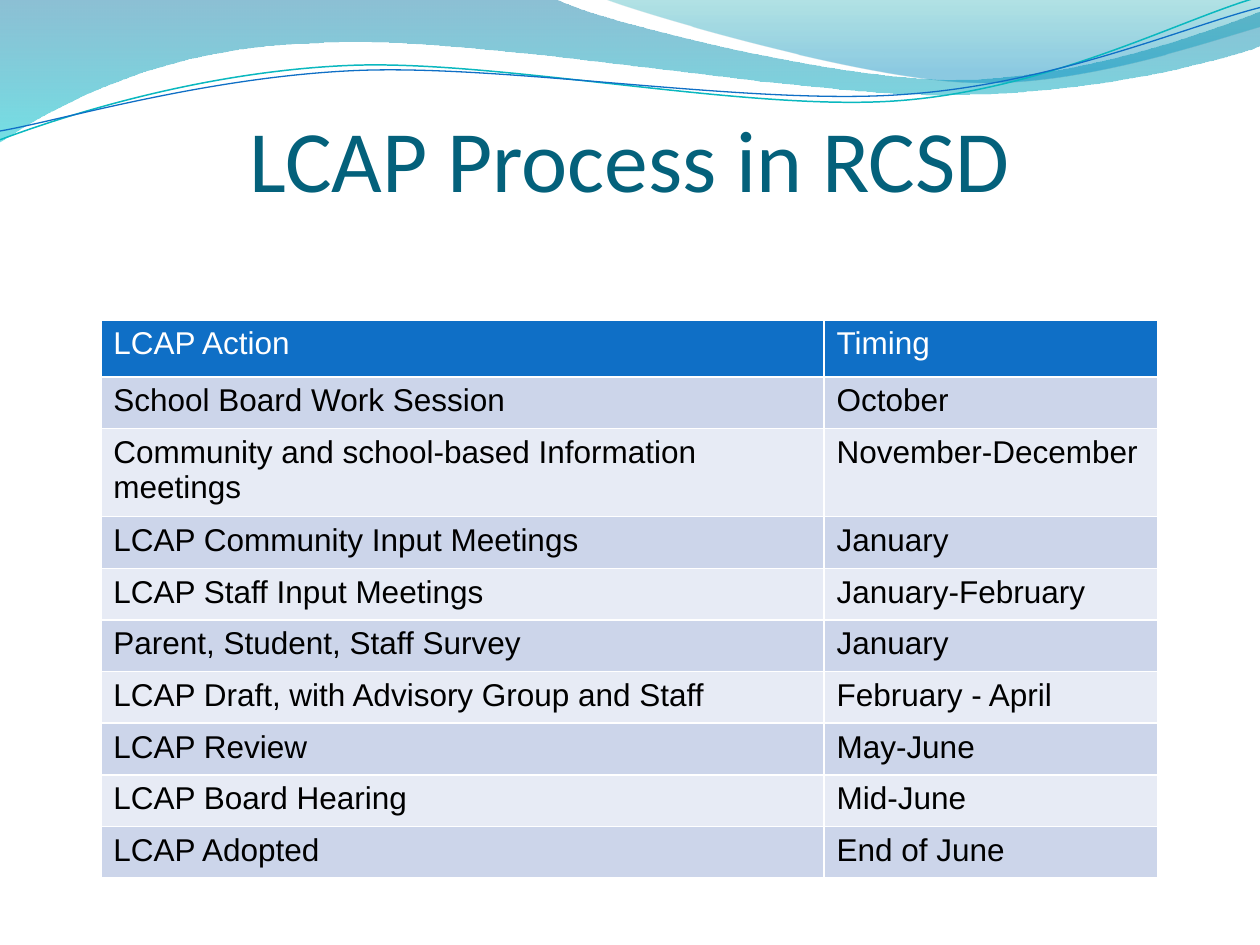
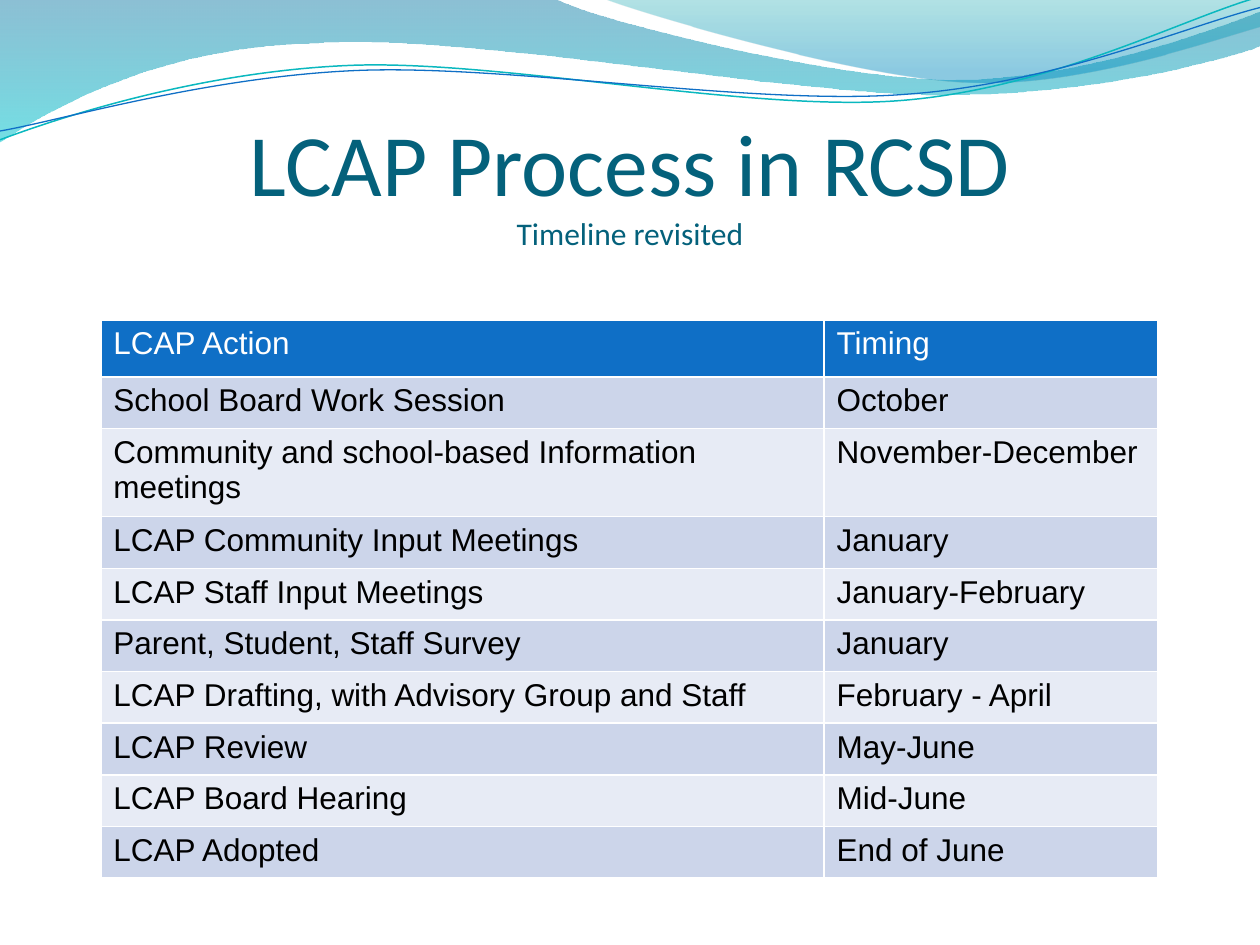
from dataclasses import dataclass

from lxml.etree import SubElement
from pptx import Presentation
from pptx.dml.color import RGBColor
from pptx.enum.text import MSO_ANCHOR, PP_ALIGN
from pptx.oxml.ns import qn
from pptx.shapes.autoshape import Shape
from pptx.slide import Slide
from pptx.util import Inches, Pt

WHITE, BLACK = "FFFFFF", "000000"
BLUE, TEAL, TITLE_INK = "0F6FC6", "0AB8BF", "04617B"
BANDS = ("CCD5EA", "E7EBF5")

Point = tuple[float, float]


@dataclass(frozen=True)
class GradientStop:
    position: float
    color: str
    opacity: int


@dataclass(frozen=True)
class Wave:
    start: Point
    segments: tuple[tuple[Point, ...], ...]
    stops: tuple[GradientStop, ...] = ()
    line_color: str = ""
    line_width: float = 0


@dataclass(frozen=True)
class Timeline:
    title_top: float
    subtitle: str
    draft_action: str


WAVES = (
    Wave(
        (0, 0),
        (
            ((4.4, -0.01),),
            ((4.76, 0.17), (6.64, 0.63), (7.58, 0.63)),
            ((8.53, 0.63), (9.58, 0.26), (10, 0.09)),
            ((10.01, 0.36),),
            ((9.83, 0.44), (8.7, 0.76), (7.46, 0.75)),
            ((6.22, 0.75), (3.82, 0.28), (2.57, 0.34)),
            ((1.29, 0.36), (0.46, 0.83), (-0.01, 1.13)),
            ((0, 0),),
        ),
        stops=(GradientStop(0, "0074A1", 45), GradientStop(1, "00C6CF", 55)),
    ),
    Wave(
        (4.79, -0.01),
        (
            ((5.09, 0.11), (6.82, 0.62), (7.69, 0.65)),
            ((8.56, 0.69), (9.61, 0.32), (10, 0.21)),
            ((10, 0),),
            ((4.79, -0.01),),
        ),
        stops=(GradientStop(0, "00A1A9", 30), GradientStop(0.8, "008BBF", 45)),
    ),
    Wave(
        (0, 1.11),
        (
            ((0.48, 0.93), (1.58, 0.57), (2.77, 0.52)),
            ((3.95, 0.47), (5.93, 0.89), (7.13, 0.8)),
            ((8.33, 0.71), (9.38, 0.15), (9.98, -0.02)),
        ),
        line_color=TEAL,
        line_width=0.85,
    ),
    Wave(
        (0, 1.04),
        (
            ((0.47, 0.96), (1.64, 0.61), (2.83, 0.56)),
            ((4.03, 0.51), (5.97, 0.84), (7.17, 0.75)),
            ((8.36, 0.67), (9.41, 0.21), (10, 0.06)),
        ),
        line_color=BLUE,
        line_width=0.75,
    ),
)

TIMELINES = (
    Timeline(0.42, "", "LCAP Draft, with Advisory Group and Staff"),
    Timeline(0.75, "Timeline revisited", "LCAP Drafting, with Advisory Group and Staff"),
)


def rgb(color: str) -> RGBColor:
    return RGBColor.from_string(color)


def bend_segments(shape: Shape, wave: Wave) -> None:
    lines = iter(list(shape.element.iter(qn("a:lnTo"))))
    for segment in wave.segments:
        parts = [next(lines) for _ in segment]
        if len(parts) == 3:
            curve = parts[0]
            curve.tag = qn("a:cubicBezTo")
            for part in parts[1:]:
                curve.append(part[0])
                part.getparent().remove(part)


def draw_wave(page: Slide, wave: Wave) -> None:
    corners = [
        (Inches(x), Inches(y)) for segment in wave.segments for x, y in segment
    ]
    builder = page.shapes.build_freeform(Inches(wave.start[0]), Inches(wave.start[1]))
    builder.add_line_segments(corners, close=bool(wave.stops))
    shape = builder.convert_to_shape()
    bend_segments(shape, wave)
    shape.shadow.inherit = False
    if not wave.stops:
        shape.fill.background()
        shape.line.color.rgb = rgb(wave.line_color)
        shape.line.width = Pt(wave.line_width)
        return
    shape.line.fill.background()
    shape.fill.gradient()
    shape.fill.gradient_angle = 270
    for target, stop in zip(shape.fill.gradient_stops, wave.stops):
        target.position = stop.position
        target.color.rgb = rgb(stop.color)
    for color, stop in zip(shape.element.iter(qn("a:srgbClr")), wave.stops):
        SubElement(color, qn("a:alpha"), val=str(stop.opacity * 1000))


def draw_title(page: Slide, timeline: Timeline) -> None:
    box = page.shapes.add_textbox(
        Inches(0.5), Inches(timeline.title_top), Inches(9), Inches(1.25)
    )
    frame = box.text_frame
    frame.word_wrap = True
    frame.vertical_anchor = MSO_ANCHOR.BOTTOM
    frame.margin_left = frame.margin_right = frame.margin_bottom = 0
    frame.margin_top = Inches(0.05)
    para = frame.paragraphs[0]
    para.alignment = PP_ALIGN.CENTER
    para.font.name = "Calibri"
    para.font.size = Pt(50)
    para.font.color.rgb = rgb(TITLE_INK)
    para.add_run().text = "LCAP Process in RCSD"
    if timeline.subtitle:
        para.add_line_break()
        span = para.add_run()
        span.text = timeline.subtitle
        span.font.size = Pt(18)


def draw_table(page: Slide, timeline: Timeline) -> None:
    rows = (
        ("LCAP Action", "Timing"),
        ("School Board Work Session", "October"),
        ("Community and school-based Information meetings", "November-December"),
        ("LCAP Community Input Meetings", "January"),
        ("LCAP Staff Input Meetings", "January-February"),
        ("Parent, Student, Staff Survey", "January"),
        (timeline.draft_action, "February - April"),
        ("LCAP Review", "May-June"),
        ("LCAP Board Hearing", "Mid-June"),
        ("LCAP Adopted", "End of June"),
    )
    table = page.shapes.add_table(
        len(rows), 2, Inches(0.8), Inches(2.54), Inches(8.39), Inches(4.4)
    ).table
    for column, width in zip(table.columns, (5.74, 2.65)):
        column.width = Inches(width)
    for index, texts in enumerate(rows):
        is_header = index == 0
        table.rows[index].height = Inches(0.45 if is_header else 0.41)
        for cell, text in zip(table.rows[index].cells, texts):
            cell.fill.solid()
            cell.fill.fore_color.rgb = rgb(BLUE if is_header else BANDS[(index - 1) % 2])
            cell.text = text
            font = cell.text_frame.paragraphs[0].font
            font.name = "Arial"
            font.size = Pt(18)
            font.bold = False
            font.color.rgb = rgb(WHITE if is_header else BLACK)


def main() -> None:
    deck = Presentation()
    deck.slide_width, deck.slide_height = Inches(10), Inches(7.5)
    for timeline in TIMELINES:
        page = deck.slides.add_slide(deck.slide_layouts[6])
        for wave in WAVES:
            draw_wave(page, wave)
        draw_title(page, timeline)
        draw_table(page, timeline)
    deck.save("out.pptx")


if __name__ == "__main__":
    main()
